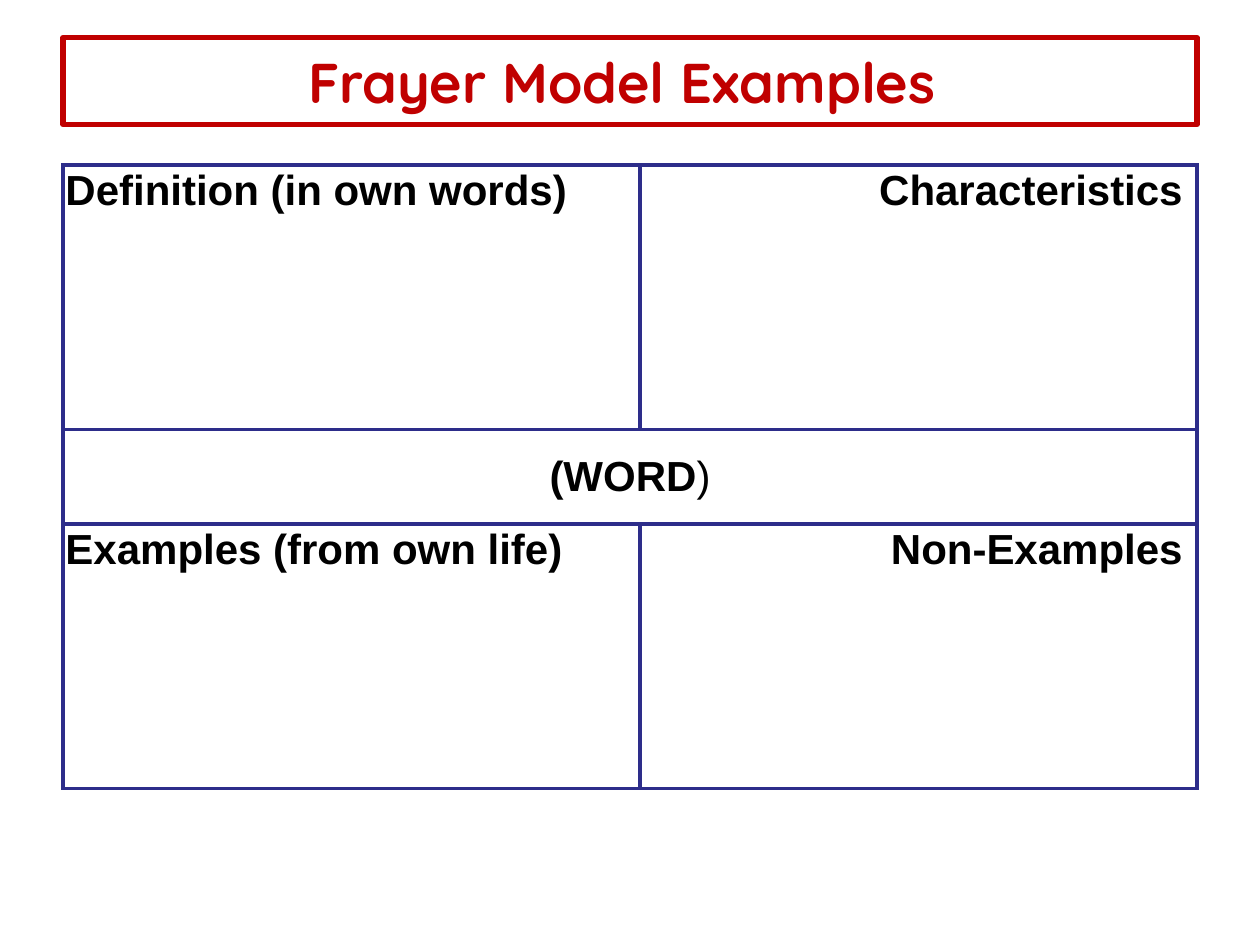
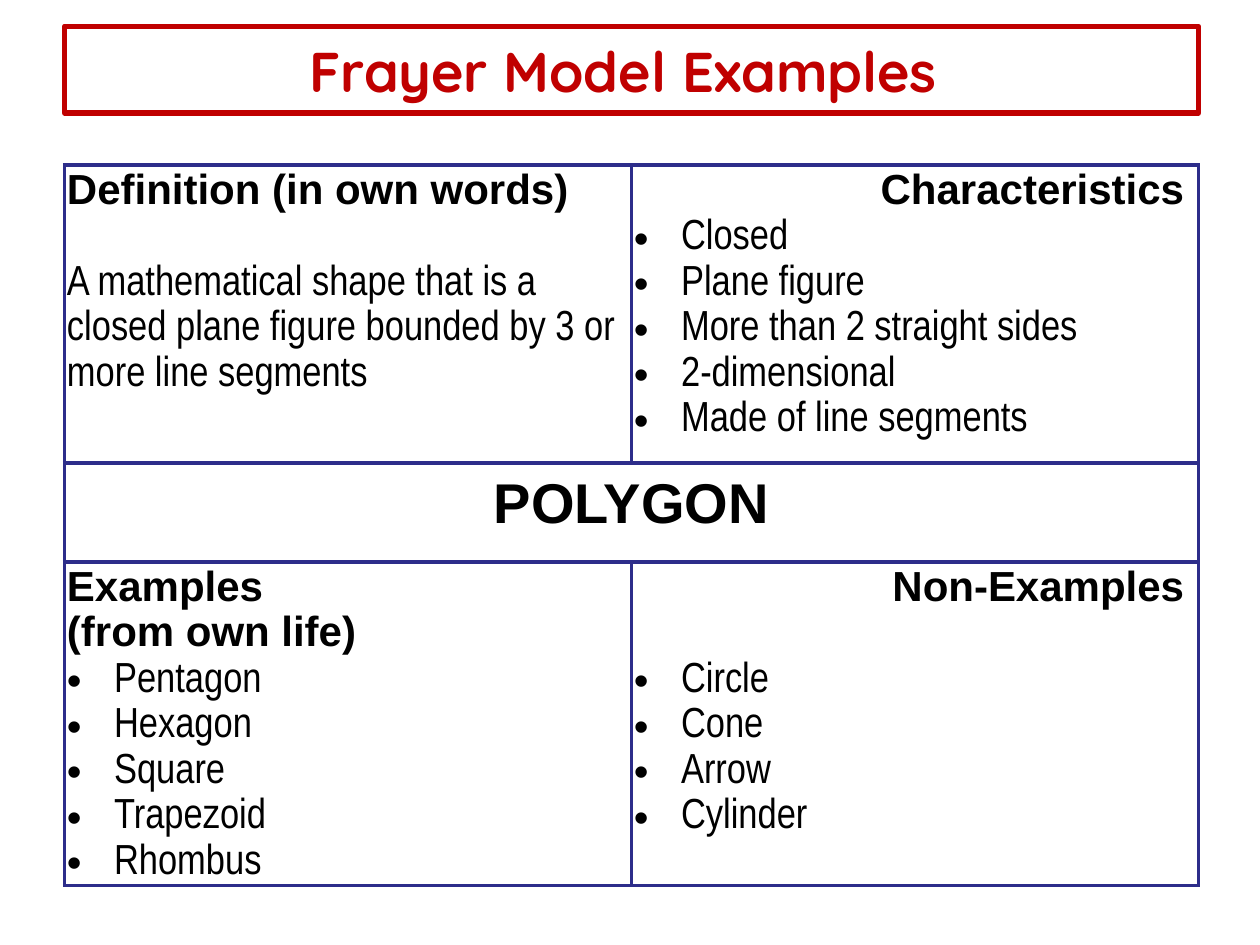
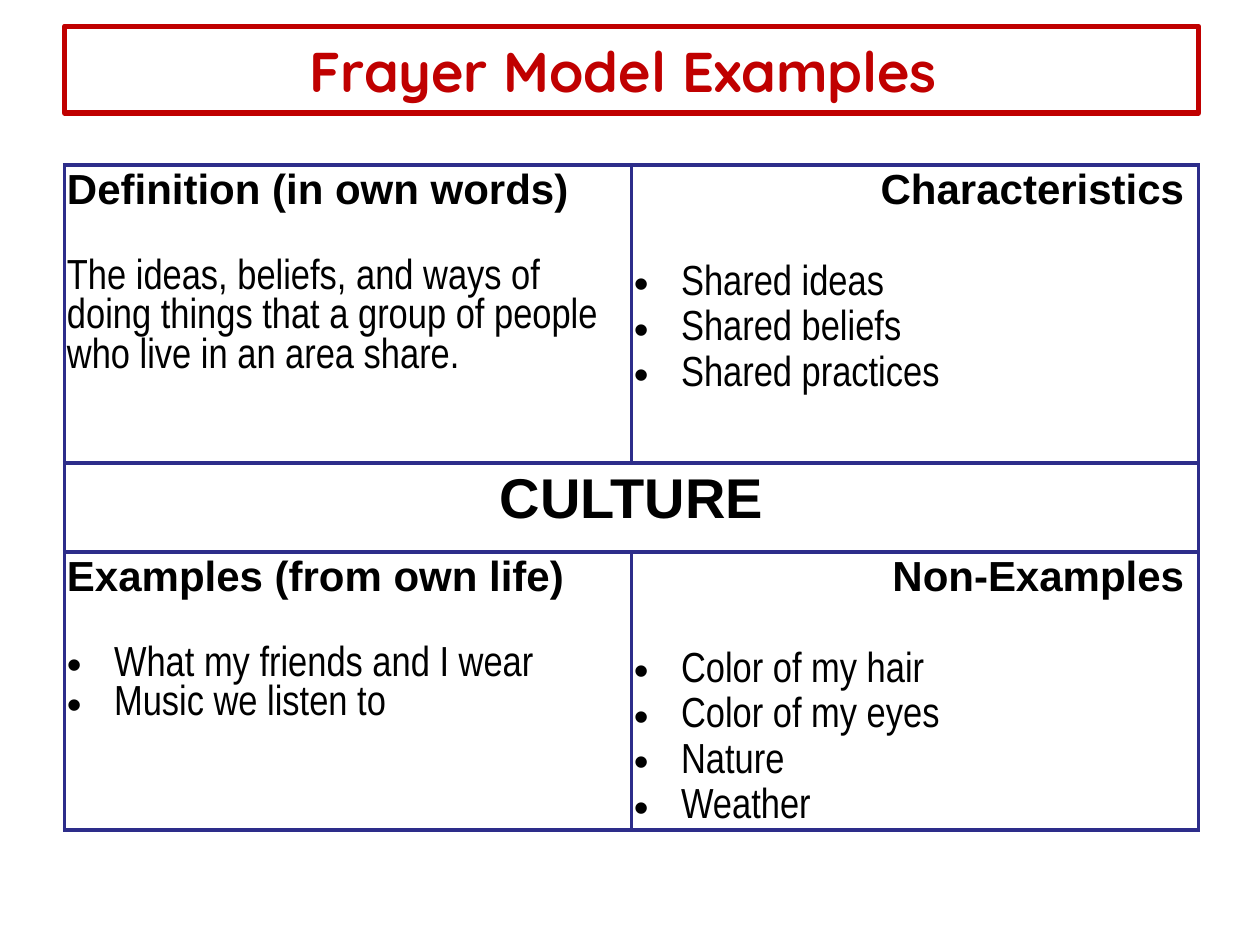
from lxml import etree
from pptx import Presentation
from pptx.dml.color import RGBColor
from pptx.enum import shapes, text
from pptx.oxml import ns
from pptx.util import Cm, Pt

# Shared look
RED, BLUE, BLACK, WHITE = "C00000", "2D2D8A", "000000", "FFFFFF"
LEFT, RIGHT, MID = text.PP_ALIGN.LEFT, text.PP_ALIGN.RIGHT, text.PP_ALIGN.CENTER
TITLE = dict(name="Quicksand", size=Pt(32), bold=True)
HEAD = dict(name="Arial", size=Pt(24), bold=True)
PLAIN = dict(HEAD, bold=False)
BODY = dict(name="Arial Narrow", size=Pt(24), bold=False)
WORD = dict(HEAD, size=Pt(32))
LEAD = Pt(26)
PAD = Cm(0.05)
WIDE = 22.86
TOP = 3.33


def put(obj, vals):
    for key, val in vals.items():
        setattr(obj, key, val)


def tint(part, code):
    """Colour a font or a line, or fill a solid area."""
    if hasattr(part, "solid"):
        part.solid()
        part.fore_color.rgb = RGBColor.from_string(code)
    else:
        part.color.rgb = RGBColor.from_string(code)


def sub(node, tag, **vals):
    return etree.SubElement(node, ns.qn("a:" + tag), vals)


def write(par, runs, align=LEFT, lead=None, gap=None, color=BLACK):
    put(par, dict(alignment=align, line_spacing=lead, space_before=gap))
    for words, form in runs:
        run = par.add_run()
        run.text = words
        put(run.font, form)
        tint(run.font, color)


def bullet(par):
    prop = par._p.get_or_add_pPr()
    prop.set("marL", str(Cm(0.95)))
    prop.set("indent", str(-Cm(0.95)))
    sub(prop, "buFont", typeface="Arial")
    sub(prop, "buChar", char="•")


# Title band
def band(slide, left, top):
    box = slide.shapes.add_shape(shapes.MSO_SHAPE.RECTANGLE,
                                 Cm(left), Cm(top), Cm(WIDE), Cm(1.75))
    box.shadow.inherit = False
    box.fill.background()
    tint(box.line, RED)
    box.line.width = Pt(3)
    frame = box.text_frame
    put(frame, dict(word_wrap=True, vertical_anchor=text.MSO_ANCHOR.MIDDLE,
                    margin_left=Cm(0.25), margin_right=Cm(0.57),
                    margin_top=0, margin_bottom=0))
    write(frame.paragraphs[0], [("Frayer Model Examples", TITLE)], MID, color=RED)


# Table parts
def edge(cell):
    prop = cell._tc.get_or_add_tcPr()
    for spot, side in enumerate(("lnL", "lnR", "lnT", "lnB")):
        line = etree.Element(ns.qn("a:" + side), w=str(Pt(2.25)))
        sub(sub(line, "solidFill"), "srgbClr", val=BLUE)
        prop.insert(spot, line)


def fill(cell, heads, items=(), align=LEFT, dots=True, gap=None, lead=LEAD, top=LEAD):
    """Write headings with line spacing top, then items with line spacing lead."""
    frame = cell.text_frame
    for num, head in enumerate(heads):
        par = frame.add_paragraph() if num else frame.paragraphs[0]
        write(par, [(head, HEAD)], align, top)
    if align == RIGHT:
        cell.margin_right = Cm(0.29)
    for num, item in enumerate(items):
        par = frame.add_paragraph()
        if dots:
            bullet(par)
        write(par, [(item, BODY)], LEFT, lead, None if num else gap)


def grid(slide, left, cols, rows, word, cells, lead=LEAD):
    shape = slide.shapes.add_table(3, 2, Cm(left), Cm(TOP), Cm(WIDE), Cm(sum(rows)))
    table = shape.table
    put(table, dict(first_row=False, horz_banding=False))
    for col, size in zip(table.columns, cols):
        col.width = Cm(size)
    for row, size in zip(table.rows, rows):
        row.height = Cm(size)
    for cell in table.iter_cells():
        put(cell, dict.fromkeys(("margin_left", "margin_right",
                                 "margin_top", "margin_bottom"), PAD))
        tint(cell.fill, WHITE)
        edge(cell)
    hub = table.cell(1, 0)
    hub.merge(table.cell(1, 1))
    hub.vertical_anchor = text.MSO_ANCHOR.MIDDLE
    write(hub.text_frame.paragraphs[0], word, MID, lead)
    for num, vals in enumerate(cells):
        row, col = divmod(num, 2)
        fill(table.cell(row * 2, col), align=RIGHT if col else LEFT, top=lead, **vals)


# Content
DEFINE, TRAITS = ["Definition (in own words)"], ["Characteristics"]
CASES, OTHERS = ["Examples (from own life)"], ["Non-Examples"]
HALF = (11.43, 11.43)

PAGES = [
    dict(left=1.27, high=0.76, cols=(11.63, 11.23), rows=(5.33, 1.9, 5.33), lead=None,
         word=[("(WORD", HEAD), (")", PLAIN)],
         cells=[dict(heads=head) for head in (DEFINE, TRAITS, CASES, OTHERS)]),
    dict(left=1.3, high=0.53, cols=HALF, rows=(6, 2, 6.5),
         word=[("POLYGON", WORD)],
         cells=[
             dict(heads=DEFINE, dots=False, gap=LEAD,
                  items=["A mathematical shape that is a closed plane figure "
                         "bounded by 3 or more line segments"]),
             dict(heads=TRAITS,
                  items=["Closed", "Plane figure", "More than 2 straight sides",
                         "2-dimensional", "Made of line segments"]),
             dict(heads=["Examples", "(from own life)"],
                  items=["Pentagon", "Hexagon", "Square", "Trapezoid", "Rhombus"]),
             dict(heads=OTHERS, gap=LEAD,
                  items=["Circle", "Cone", "Arrow", "Cylinder"]),
         ]),
    dict(left=1.3, high=0.53, cols=HALF, rows=(6, 1.8, 5.59),
         word=[("CULTURE", WORD)],
         cells=[
             dict(heads=DEFINE, dots=False, gap=LEAD, lead=None,
                  items=["The ideas, beliefs, and ways of doing things that a group "
                         "of people who live in an area share."]),
             dict(heads=TRAITS, gap=LEAD,
                  items=["Shared ideas", "Shared beliefs", "Shared practices"]),
             dict(heads=CASES, gap=LEAD, lead=None,
                  items=["What my friends and I wear", "Music we listen to"]),
             dict(heads=OTHERS, gap=LEAD,
                  items=["Color of my hair", "Color of my eyes", "Nature", "Weather"]),
         ]),
]


def main():
    deck = Presentation()
    put(deck, dict(slide_width=Cm(25.4), slide_height=Cm(19.05)))
    for page in PAGES:
        slide = deck.slides.add_slide(deck.slide_layouts[6])
        vals = dict(page)
        band(slide, page["left"], vals.pop("high"))
        grid(slide, **vals)
    deck.save("out.pptx")


if __name__ == "__main__":
    main()
